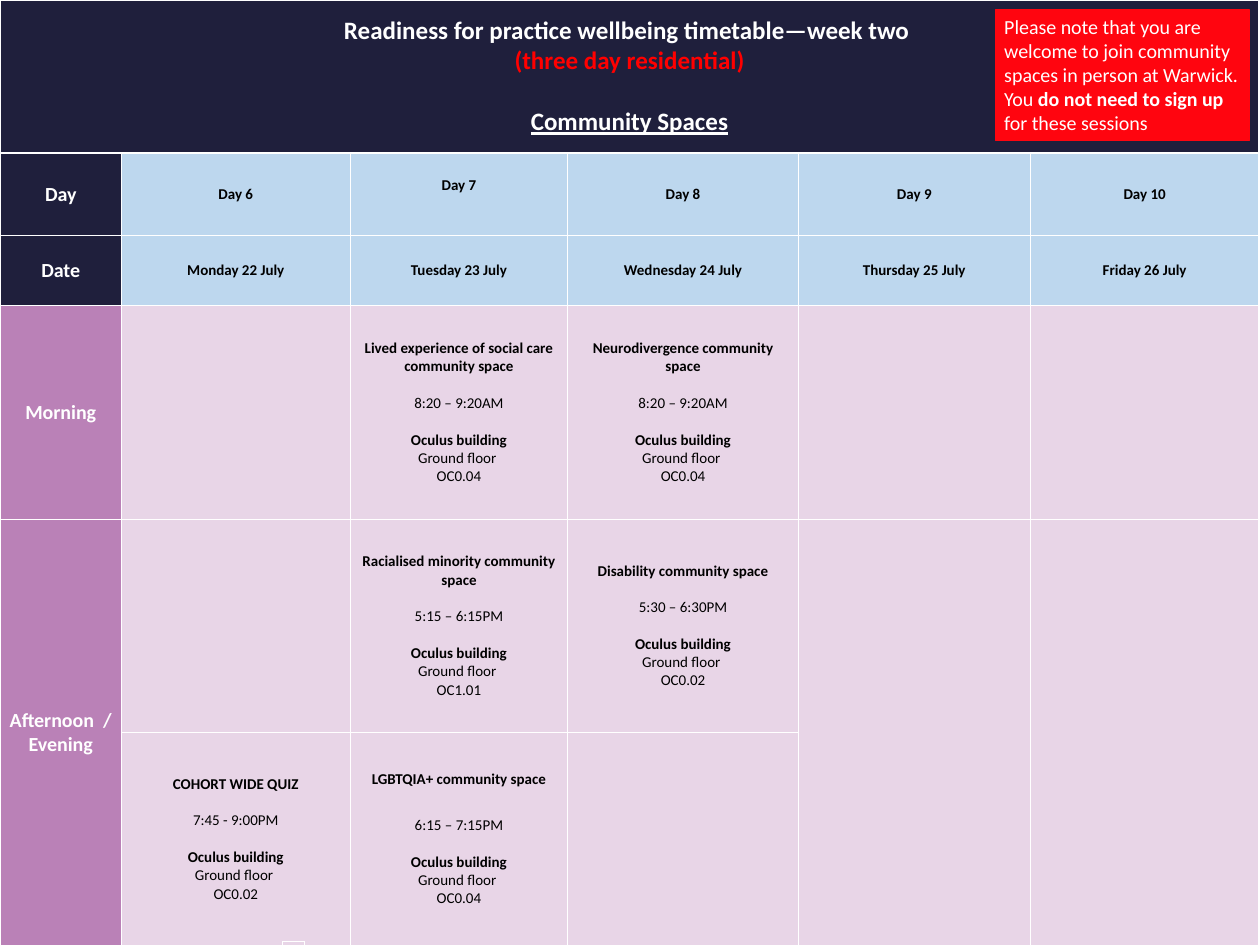
from lxml import etree
from pptx import Presentation
from pptx.dml.color import RGBColor
from pptx.enum.shapes import MSO_SHAPE as Shape
from pptx.enum.text import MSO_ANCHOR as Anchor, PP_ALIGN as Align
from pptx.oxml.ns import qn
from pptx.util import Inches, Pt

COLORS = {
    "navy": "1F1F3C", "blue": "BDD7EE", "purple": "BA81B7", "lilac": "E8D5E7",
    "red": "FF0000", "note": "FF050F", "white": "FFFFFF", "black": "000000",
    "page": "F0EEE9",
}
COLUMNS = [1.35, 2.54, 2.42, 2.56, 2.58, 2.54]
ROWS = [1.7, 0.92, 0.78, 2.37, 2.37, 2.37]
BLANK_LINE = 14.65  # points taken by one line of 12 pt text

DAYS = ["Day 6", "Day 7", "Day 8", "Day 9", "Day 10"]
DATES = ["Monday 22 July", "Tuesday 23 July", "Wednesday 24 July",
         "Thursday 25 July", "Friday 26 July"]
# (row, column): name, time, room, points between name and time
SESSIONS = {
    (3, 2): ("Lived experience of social care community space",
             "8:20 – 9:20AM", "OC0.04", BLANK_LINE),
    (3, 3): ("Neurodivergence community space",
             "8:20 – 9:20AM", "OC0.04", BLANK_LINE),
    (4, 2): ("Racialised minority community space",
             "5:15 – 6:15PM", "OC1.01", BLANK_LINE),
    (4, 3): ("Disability community space",
             "5:30 – 6:30PM", "OC0.02", BLANK_LINE),
    (5, 1): ("COHORT WIDE QUIZ", "7:45 - 9:00PM", "OC0.02", BLANK_LINE),
    (5, 2): ("LGBTQIA+ community space", "6:15 – 7:15PM", "OC0.04", 22),
}


def rgb(name):
    return RGBColor.from_string(COLORS[name])


def style(span, size, color, bold=False):
    span.font.name = "Calibri"
    span.font.size = Pt(size)
    span.font.bold = bold
    span.font.color.rgb = rgb(color)


def add_borders(cell):
    properties = cell._tc.get_or_add_tcPr()
    for side in ("a:lnL", "a:lnR", "a:lnT", "a:lnB"):
        line = etree.SubElement(properties, qn(side), w=str(Pt(1)))
        fill = etree.SubElement(line, qn("a:solidFill"))
        etree.SubElement(fill, qn("a:srgbClr"), val=COLORS["white"])


def add_grid(page, left, top, columns, rows):
    """Add a plain table with white borders and return it."""
    frame = page.shapes.add_table(len(rows), len(columns), Inches(left), Inches(top),
                                  Inches(sum(columns)), Inches(sum(rows)))
    table = frame.table
    table.first_row = table.horz_banding = False
    for column, width in zip(table.columns, columns):
        column.width = Inches(width)
    for row, height in zip(table.rows, rows):
        row.height = Inches(height)
    for cell in table.iter_cells():
        add_borders(cell)
        cell.fill.background()
    return table


def write_cell(cell, lines, size, color, bold=True):
    """Fill a cell with centred lines and return its paragraphs."""
    cell.vertical_anchor = Anchor.MIDDLE
    cell.text_frame.text = "\n".join(lines)
    for para in cell.text_frame.paragraphs:
        para.alignment = Align.CENTER
        for span in para.runs:
            style(span, size, color, bold)
    return cell.text_frame.paragraphs


def write_session(cell, name, time, room, gap):
    lines = [name, time, "Oculus building", "Ground floor ", room]
    paras = write_cell(cell, lines, 12, "black")
    for index in (1, 3, 4):
        paras[index].runs[0].font.bold = False
    paras[1].space_before = Pt(gap)
    paras[2].space_before = Pt(BLANK_LINE)


def write_title(cell):
    lines = ["Readiness for practice wellbeing timetable—week two ",
             "(three day residential)", "Community Spaces"]
    paras = write_cell(cell, lines, 20, "white")
    paras[1].runs[0].font.color.rgb = rgb("red")
    paras[2].space_before = Pt(24.4)
    paras[2].runs[0].font.underline = True


def add_timetable(page, left, top):
    table = add_grid(page, left, top, COLUMNS, ROWS)
    for row in range(len(ROWS)):
        for column in range(len(COLUMNS)):
            heading, body = ("navy", "blue") if row < 3 else ("purple", "lilac")
            fill = table.cell(row, column).fill
            fill.solid()
            fill.fore_color.rgb = rgb(heading if column == 0 or row == 0 else body)

    table.cell(0, 0).merge(table.cell(0, len(COLUMNS) - 1))
    for column in (0, 4, 5):
        table.cell(4, column).merge(table.cell(5, column))

    write_title(table.cell(0, 0))
    labels = [["Day"], ["Date"], ["Morning"], ["Afternoon  /", "Evening"]]
    for row, lines in enumerate(labels, 1):
        write_cell(table.cell(row, 0), lines, 16, "white")
    for row, texts in enumerate((DAYS, DATES), 1):
        for column, text in enumerate(texts, 1):
            write_cell(table.cell(row, column), [text], 12, "black")
    table.cell(1, 2).margin_bottom = Inches(0.25)  # Day 7 sits a little higher
    for (row, column), session in SESSIONS.items():
        write_session(table.cell(row, column), *session)


def add_note(page, left, top, width, height):
    box = page.shapes.add_shape(Shape.RECTANGLE, Inches(left), Inches(top),
                                Inches(width), Inches(height))
    box.shadow.inherit = False
    box.fill.solid()
    box.fill.fore_color.rgb = rgb("note")
    box.line.color.rgb = rgb("note")
    box.line.width = Pt(1)
    frame = box.text_frame
    frame.word_wrap = True
    frame.vertical_anchor = Anchor.TOP
    para = frame.paragraphs[0]
    para.alignment = Align.LEFT
    parts = [("Please note that you are welcome to join community spaces "
              "in person at Warwick. You ", False),
             ("do not need to sign up ", True),
             ("for these sessions", False)]
    for text, bold in parts:
        span = para.add_run()
        span.text = text
        style(span, 16, "white", bold)


def main():
    deck = Presentation()
    deck.slide_width, deck.slide_height = Inches(14), Inches(10.5)
    page = deck.slides.add_slide(deck.slide_layouts[6])
    page.background.fill.solid()
    page.background.fill.fore_color.rgb = rgb("page")
    add_timetable(page, 0, 0)
    add_grid(page, 3.14, 10.46, [0.23], [0.24])
    add_note(page, 11.06, 0.11, 2.82, 1.45)
    deck.save("out.pptx")


if __name__ == "__main__":
    main()
